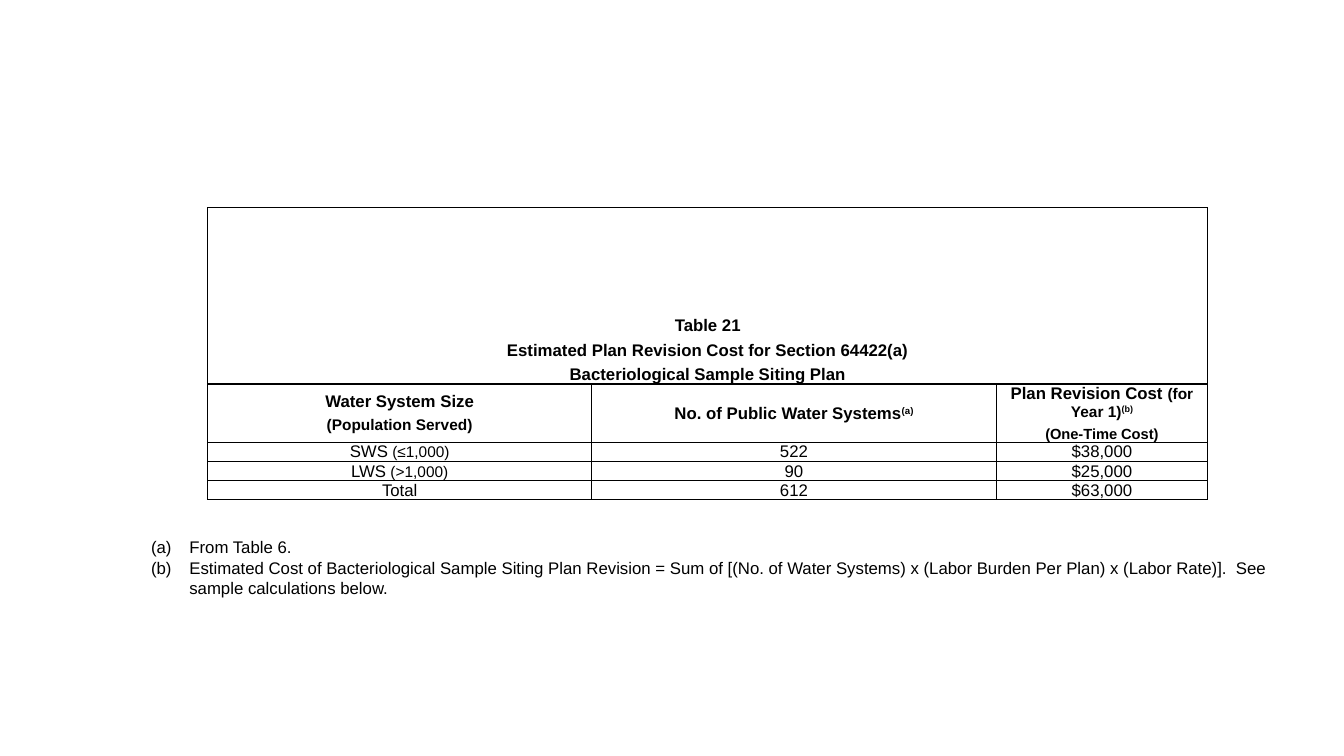
import pptx
import pptx.util
import pptx.dml.color
import pptx.enum.text
import pptx.oxml
import pptx.oxml.ns

Inches, Pt = pptx.util.Inches, pptx.util.Pt
ALIGN, ANCHOR = pptx.enum.text.PP_ALIGN, pptx.enum.text.MSO_ANCHOR
BLACK = pptx.dml.color.RGBColor(0x00, 0x00, 0x00)
FONT = "Arial"
SLIDE_WIDTH, SLIDE_HEIGHT = 13.33, 7.5

COLUMN_WIDTHS = [3.81, 4.01, 2.1]
ROW_HEIGHTS = [1.75, 0.58, 0.19, 0.19, 0.19]

# Each cell is a list of paragraphs, each paragraph a list of (text, size, raised).
CAPTION = [[("Table 21", 12, False)],
           [("Estimated Plan Revision Cost for Section 64422(a)", 12, False)],
           [("Bacteriological Sample Siting Plan", 12, False)]]
HEADINGS = [
    [[("Water System Size", 12, False)], [("(Population Served)", 11, False)]],
    [[("No. of Public Water Systems", 12, False), ("(a)", 12, True)]],
    [[("Plan Revision Cost ", 12, False), ("(for Year 1)", 11, False), ("(b)", 11, True)],
     [("(One-Time Cost)", 10.5, False)]],
]
SYSTEMS = [("SWS", " (≤1,000)", "522", "$38,000"),
           ("LWS", " (>1,000)", "90", "$25,000"),
           ("Total", "", "612", "$63,000")]
FOOTNOTES = [
    "From Table 6.",
    "Estimated Cost of Bacteriological Sample Siting Plan Revision = Sum of "
    "[(No. of Water Systems) x (Labor Burden Per Plan) x (Labor Rate)].  "
    "See sample calculations below.",
]


def style_font(font, size, bold=False):
    font.name, font.size, font.bold = FONT, Pt(size), bold
    font.color.rgb = BLACK


def add_borders(cell):
    properties = cell._tc.get_or_add_tcPr()
    for position, side in enumerate(("lnL", "lnR", "lnT", "lnB")):
        properties.insert(position, pptx.oxml.parse_xml(
            f'<a:{side} {pptx.oxml.ns.nsdecls("a")} w="12700"><a:solidFill>'
            f'<a:srgbClr val="{BLACK}"/></a:solidFill></a:{side}>'))


def fill_cell(cell, paragraphs, bold, anchor=ANCHOR.MIDDLE):
    cell.vertical_anchor = anchor
    cell.margin_left = cell.margin_right = Inches(0.07)
    cell.margin_top = cell.margin_bottom = 0
    frame = cell.text_frame
    frame.text = "\n".join("" for _ in paragraphs)
    for paragraph, pieces in zip(frame.paragraphs, paragraphs):
        paragraph.alignment = ALIGN.CENTER
        paragraph.space_before = paragraph.space_after = Pt(2)
        for text, size, raised in pieces:
            run = paragraph.add_run()
            run.text = text
            style_font(run.font, size, bold)
            if raised:
                run.font._element.set("baseline", "30000")


def add_cost_table(slide, left, top):
    table = slide.shapes.add_table(
        len(ROW_HEIGHTS), len(COLUMN_WIDTHS), Inches(left), Inches(top),
        Inches(sum(COLUMN_WIDTHS)), Inches(sum(ROW_HEIGHTS))).table
    table.first_row = table.horz_banding = False
    for column, width in zip(table.columns, COLUMN_WIDTHS):
        column.width = Inches(width)
    for row, height in zip(table.rows, ROW_HEIGHTS):
        row.height = Inches(height)
    for cell in table.iter_cells():
        cell.fill.background()
        add_borders(cell)

    table.cell(0, 0).merge(table.cell(0, len(COLUMN_WIDTHS) - 1))
    fill_cell(table.cell(0, 0), CAPTION, True, ANCHOR.BOTTOM)
    for column, heading in enumerate(HEADINGS):
        fill_cell(table.cell(1, column), heading, True)
    for row, (size_class, population, count, cost) in enumerate(SYSTEMS, start=2):
        label = [(size_class, 12, False)]
        if population:
            label.append((population, 11, False))
        for column, pieces in enumerate((label, [(count, 12, False)], [(cost, 12, False)])):
            fill_cell(table.cell(row, column), [pieces], False)


def add_footnotes(slide, left, top, width, height):
    frame = slide.shapes.add_textbox(
        Inches(left), Inches(top), Inches(width), Inches(height)).text_frame
    frame.word_wrap = True
    frame.auto_size = pptx.enum.text.MSO_AUTO_SIZE.SHAPE_TO_FIT_TEXT
    frame.text = "\n".join(FOOTNOTES)
    for note in frame.paragraphs:
        style_font(note.runs[0].font, 12)
        properties = note._p.get_or_add_pPr()
        properties.set("marL", str(Inches(0.38)))
        properties.set("indent", str(-Inches(0.38)))
        properties.append(pptx.oxml.parse_xml(
            f'<a:buFont {pptx.oxml.ns.nsdecls("a")} typeface="{FONT}"/>'))
        properties.append(pptx.oxml.parse_xml(
            f'<a:buAutoNum {pptx.oxml.ns.nsdecls("a")} type="alphaLcParenBoth"/>'))
    frame.paragraphs[0].space_before = Pt(2)
    frame.paragraphs[-1].space_after = Pt(24)


def main():
    presentation = pptx.Presentation()
    presentation.slide_width = Inches(SLIDE_WIDTH)
    presentation.slide_height = Inches(SLIDE_HEIGHT)
    slide = presentation.slides.add_slide(presentation.slide_layouts[6])
    add_cost_table(slide, 2.06, 2.06)
    add_footnotes(slide, 1.4, 5.28, 11.54, 0.71)
    presentation.save("out.pptx")


if __name__ == "__main__":
    main()
